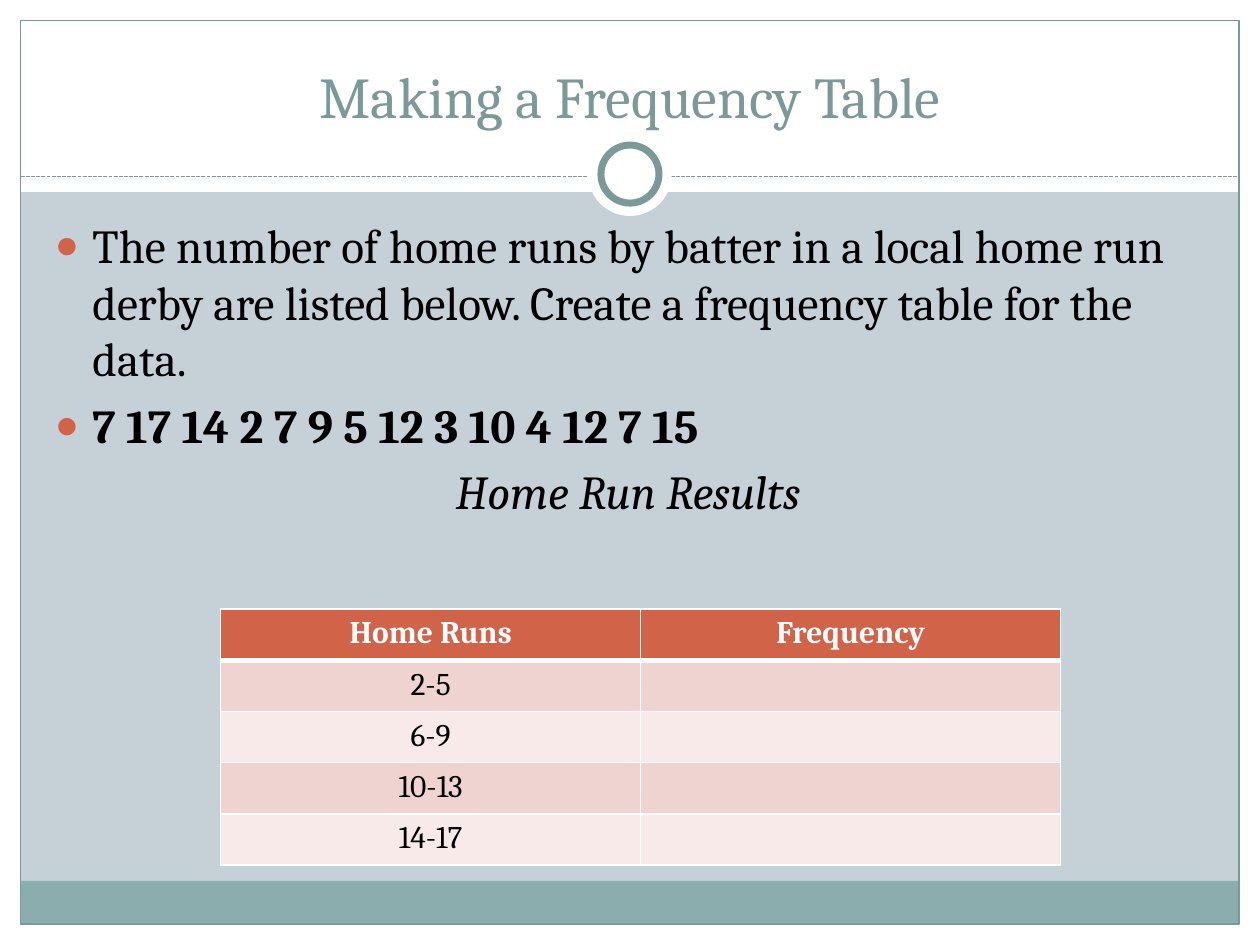
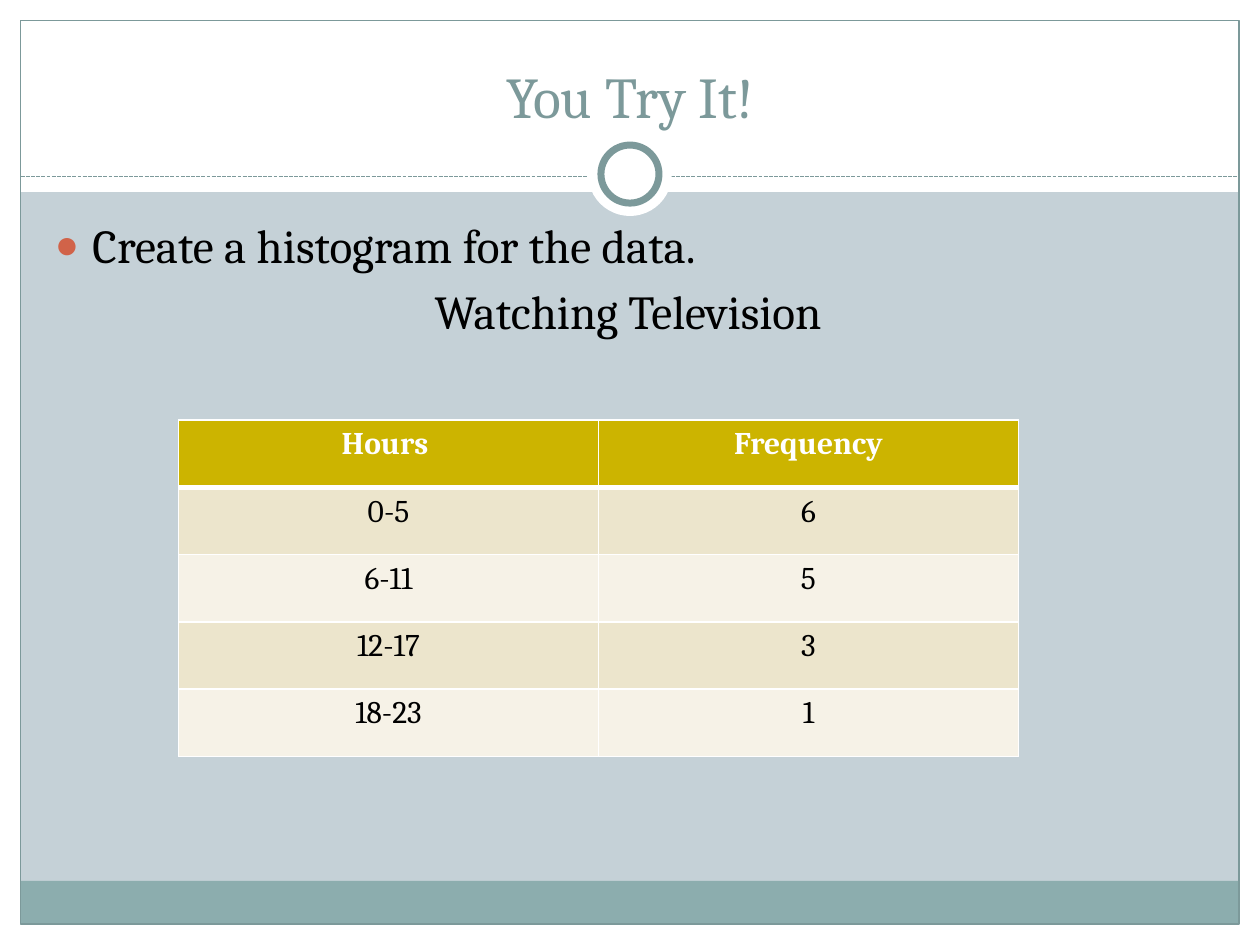
from collections import namedtuple

from lxml.etree import SubElement
from pptx import Presentation
from pptx.dml.color import RGBColor
from pptx.enum.dml import MSO_LINE
from pptx.enum.shapes import MSO_CONNECTOR, MSO_SHAPE as Preset
from pptx.enum.text import MSO_ANCHOR, MSO_AUTO_SIZE, PP_ALIGN as Align
from pptx.oxml.ns import qn
from pptx.util import Cm, Pt

# Theme
FONT = "Cambria"
WHITE = RGBColor(0xFF, 0xFF, 0xFF)
BLACK = RGBColor(0, 0, 0)
MIST = RGBColor(0xC5, 0xD1, 0xD7)
TEAL = RGBColor(0x8C, 0xAD, 0xAE)
SLATE = RGBColor(0x7C, 0x99, 0x9A)
RUST = RGBColor(0xD1, 0x63, 0x49)
RUST_TINT = RGBColor(0xEE, 0xD3, 0xD0)
RUST_PALE = RGBColor(0xF7, 0xEA, 0xE9)
GOLD = RGBColor(0xCC, 0xB4, 0x00)
GOLD_TINT = RGBColor(0xEC, 0xE5, 0xCC)
GOLD_PALE = RGBColor(0xF6, 0xF2, 0xE7)

# All boxes are in centimetres
Box = namedtuple("Box", "left top width height")
PAGE = Box(0, 0, 25.4, 19.05)
TITLE = Box(0.85, 0.64, 23.7, 2.11)
BODY = Box(0.85, 4.23, 23.62, 12.7)
MARGIN = 0.42


def write(paragraph, text, size=27, color=BLACK, align=Align.CENTER, bold=False, italic=False):
    paragraph.alignment = align
    run = paragraph.add_run()
    run.text = text
    font = run.font
    font.name, font.size, font.bold, font.italic = FONT, Pt(size), bold, italic
    font.color.rgb = color


def set_bullet(paragraph, bulleted):
    props = paragraph._p.get_or_add_pPr()
    indent = Cm(0.76) if bulleted else 0
    props.set("marL", str(indent))
    props.set("indent", str(-indent))
    if not bulleted:
        SubElement(props, qn("a:buNone"))
        return
    SubElement(SubElement(props, qn("a:buClr")), qn("a:srgbClr"), val=str(RUST))
    SubElement(props, qn("a:buSzPct"), val="85000")
    SubElement(props, qn("a:buChar"), char="●")


def add_preset(slide, preset, box, fill=None, line=None, line_width=0.75):
    shape = slide.shapes.add_shape(preset, *map(Cm, box))
    shape.shadow.inherit = False
    if fill is None:
        shape.fill.background()
    else:
        shape.fill.solid()
        shape.fill.fore_color.rgb = fill
    if line is None:
        shape.line.fill.background()
    else:
        shape.line.color.rgb = line
        shape.line.width = Pt(line_width)
    return shape


def draw_frame(slide, box):
    """Draw the white border, footer band, divider and ring; return the parts."""
    left, top, width, height = box
    right, bottom = left + width, top + height
    inner_width = width - 2 * MARGIN
    bands = [
        (Box(left, bottom - MARGIN, width, MARGIN), WHITE),
        (Box(left, top, width, 3.87), WHITE),
        (Box(left, top, MARGIN, height), WHITE),
        (Box(right - MARGIN, top, MARGIN, height), WHITE),
        (Box(left + MARGIN, bottom - MARGIN - 0.87, inner_width, 0.87), TEAL),
    ]
    parts = [add_preset(slide, Preset.RECTANGLE, band, fill) for band, fill in bands]
    inner = Box(left + MARGIN, top + MARGIN, inner_width, height - 2 * MARGIN)
    parts.append(add_preset(slide, Preset.RECTANGLE, inner, line=SLATE))

    # Dashed divider
    divider_y = Cm(top + 3.56)
    divider = slide.shapes.add_connector(
        MSO_CONNECTOR.STRAIGHT, Cm(left + MARGIN), divider_y, Cm(right - MARGIN), divider_y)
    divider.line.color.rgb = SLATE
    divider.line.width = Pt(0.75)
    divider.line.dash_style = MSO_LINE.SQUARE_DOT
    SubElement(divider._element.spPr, qn("a:effectLst"))
    parts.append(divider)

    # Ring on the divider
    center_x, center_y = left + width / 2, top + 3.51
    for diameter, line in ((1.69, None), (1.17, SLATE)):
        disc = Box(center_x - diameter / 2, center_y - diameter / 2, diameter, diameter)
        parts.append(add_preset(slide, Preset.OVAL, disc, WHITE, line, 4))
    return parts


def place(placeholder, box):
    placeholder.left, placeholder.top, placeholder.width, placeholder.height = map(Cm, box)


def prepare_layout(layout):
    """Put background and placeholder places on the layout."""
    layout.background.fill.solid()
    layout.background.fill.fore_color.rgb = MIST
    title, body, *footers = layout.placeholders
    for footer in footers:
        footer._element.getparent().remove(footer._element)
    place(title, TITLE)
    place(body, BODY)


def share_frame(layout, slide):
    """Move the frame behind the placeholders of the layout."""
    for position, part in enumerate(draw_frame(slide, PAGE), start=2):
        layout.shapes._spTree.insert(position, part._element)


def set_borders(cell, bottom):
    props = cell._tc.get_or_add_tcPr()
    for side, width in (("L", 1), ("R", 1), ("T", 1), ("B", bottom)):
        edge = SubElement(props, qn(f"a:ln{side}"), w=str(Pt(width)))
        SubElement(SubElement(edge, qn("a:solidFill")), qn("a:srgbClr"), val=str(WHITE))


def add_frequency_table(slide, box, rows, header_fill, band_fills):
    table = slide.shapes.add_table(len(rows), len(rows[0]), *map(Cm, box)).table
    for row in table.rows:
        row.height = Cm(box.height / len(rows))
    for r, values in enumerate(rows):
        is_header = r == 0
        for c, value in enumerate(values):
            cell = table.cell(r, c)
            set_borders(cell, bottom=3 if is_header else 1)
            cell.fill.solid()
            cell.fill.fore_color.rgb = header_fill if is_header else band_fills[(r - 1) % 2]
            if value:
                write(cell.text_frame.paragraphs[0], value, size=18, bold=is_header,
                      color=WHITE if is_header else BLACK)


def add_lesson_slide(deck, layout, title, bullets, caption):
    """Each bullet and the caption is a text with its format."""
    slide = deck.slides.add_slide(layout)
    heading, body = slide.placeholders
    heading.text_frame.vertical_anchor = MSO_ANCHOR.BOTTOM
    write(heading.text_frame.paragraphs[0], title, size=33, color=SLATE)

    frame = body.text_frame
    frame.auto_size = MSO_AUTO_SIZE.NONE
    lines = [(text, style, True) for text, style in bullets] + [(*caption, False)]
    for n, (text, style, bulleted) in enumerate(lines):
        paragraph = frame.add_paragraph() if n else frame.paragraphs[0]
        set_bullet(paragraph, bulleted)
        write(paragraph, text, align=Align.LEFT if bulleted else Align.CENTER, **style)
    return slide


def main():
    deck = Presentation()
    deck.slide_width, deck.slide_height = Cm(PAGE.width), Cm(PAGE.height)
    layout = deck.slide_layouts[1]
    prepare_layout(layout)

    # Worked example
    example = add_lesson_slide(
        deck, layout, "Making a Frequency Table",
        [("The number of home runs by batter in a local home run derby are listed below. "
          "Create a frequency table for the data.", {}),
         ("7 17 14 2 7 9 5 12 3 10 4 12 7 15", {"bold": True})],
        ("Home Run Results", {"italic": True}))
    share_frame(layout, example)
    add_frequency_table(
        example, Box(4.45, 12.28, 16.93, 5.16),
        [("Home Runs", "Frequency"), ("2-5", ""), ("6-9", ""), ("10-13", ""), ("14-17", "")],
        RUST, (RUST_TINT, RUST_PALE))

    # Exercise
    exercise = add_lesson_slide(
        deck, layout, "You Try It!",
        [("Create a histogram for the data.", {})], ("Watching Television", {}))
    add_frequency_table(
        exercise, Box(3.6, 8.47, 16.93, 6.78),
        [("Hours ", "Frequency"), ("0-5", "6"), ("6-11", "5"), ("12-17", "3"), ("18-23", "1")],
        GOLD, (GOLD_TINT, GOLD_PALE))

    deck.save("out.pptx")


if __name__ == "__main__":
    main()
